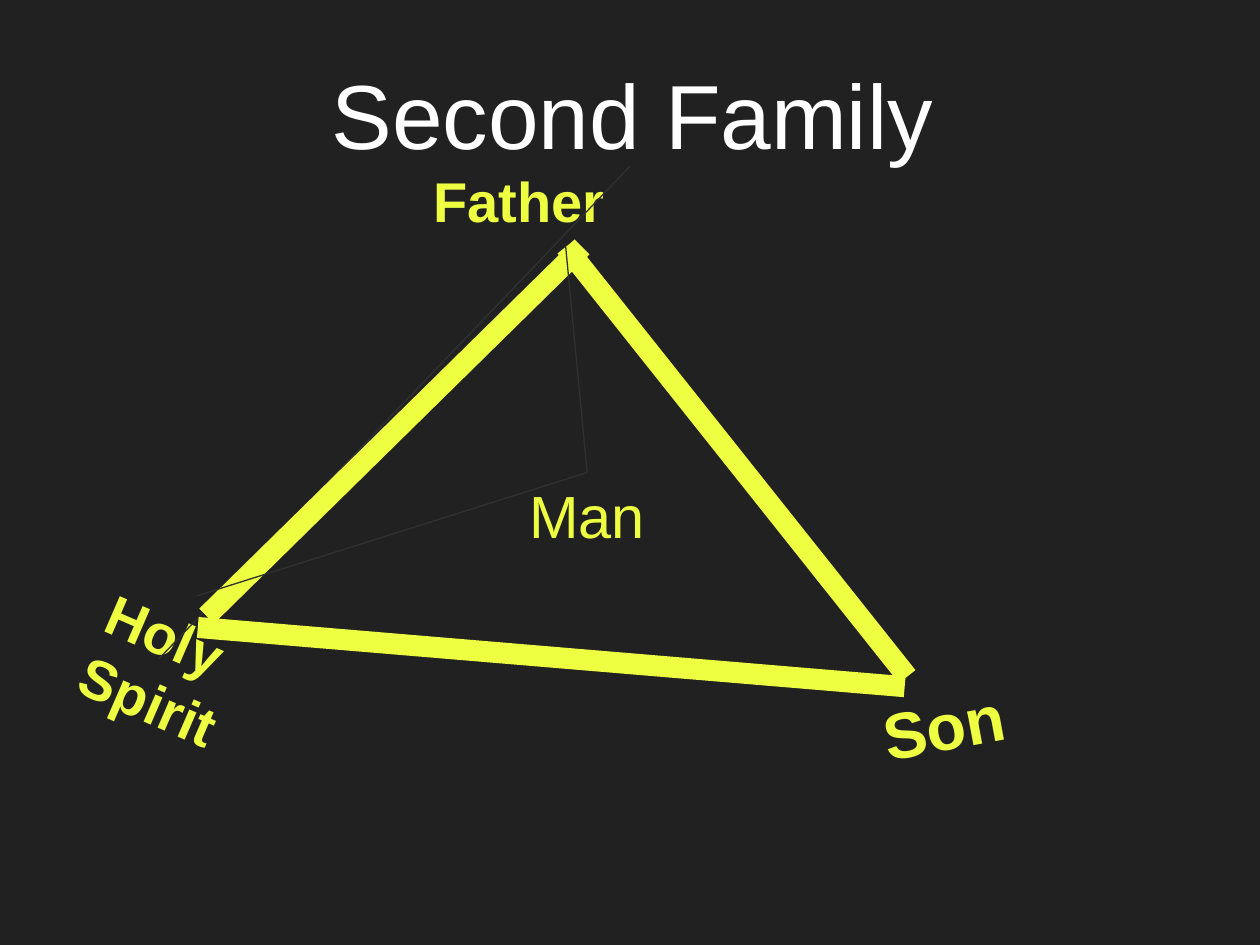
from dataclasses import dataclass
from lxml import etree
from pptx import Presentation
from pptx import util as u
from pptx.dml.color import RGBColor
from pptx.enum import shapes, text
from pptx.oxml.ns import qn


@dataclass(frozen=True)
class Theme:
    font: str = "Arial"
    back: str = "212121"
    white: str = "FFFFFF"
    lime: str = "EEFF41"
    faint: str = "303030"
    title: int = 52
    body: int = 34
    label: int = 32
    large: int = 37
    thick: float = 12
    thin: float = 0.75


class Deck:
    def __init__(self, theme):
        self.theme = theme
        self.prs = Presentation()
        self.prs.slide_width, self.prs.slide_height = u.Inches(10), u.Inches(7.5)
        self.slide = self.prs.slides.add_slide(self.prs.slide_layouts[0])
        fill = self.slide.background.fill
        fill.solid()
        fill.fore_color.rgb = RGBColor.from_string(theme.back)

    def style(self, shape, words, size, color, inset, bold=False):
        frame = shape.text_frame
        frame.text = words
        frame.word_wrap = True
        side, edge = map(u.Inches, inset)
        frame.margin_left = frame.margin_right = side
        frame.margin_top = frame.margin_bottom = edge
        font = frame.paragraphs[0].runs[0].font
        font.name, font.size, font.bold = self.theme.font, u.Pt(size), bold
        font.color.rgb = RGBColor.from_string(color)
        return frame

    def holder(self, index, words, box, size, color, inset, anchor):
        shape = self.slide.placeholders[index]
        shape.left, shape.top, shape.width, shape.height = map(u.Inches, box)
        frame = self.style(shape, words, size, color, inset)
        frame.auto_size = text.MSO_AUTO_SIZE.NONE
        frame.vertical_anchor = anchor
        frame.paragraphs[0].alignment = text.PP_ALIGN.CENTER
        frame.paragraphs[0].space_before = u.Pt(0)
        return shape

    def label(self, words, box, size, turn=0):
        shape = self.slide.shapes.add_textbox(*map(u.Inches, box))
        shape.rotation = turn
        frame = self.style(shape, words, size, self.theme.lime, (0.1, 0.1), True)
        frame.auto_size = text.MSO_AUTO_SIZE.SHAPE_TO_FIT_TEXT
        return shape

    def line(self, start, end, color, width, head=None, tail=None):
        """Draw a line; head and tail are (shape, side) joints."""
        wire = self.slide.shapes.add_connector(
            shapes.MSO_CONNECTOR.STRAIGHT, *map(u.Inches, start + end))
        wire.line.color.rgb = RGBColor.from_string(color)
        wire.line.width = u.Pt(width)
        etree.SubElement(wire._element.spPr, qn("a:effectLst"))
        if head:
            wire.begin_connect(*head)
        if tail:
            wire.end_connect(*tail)


def main():
    t = Theme()
    deck = Deck(t)

    # Title and centre word
    deck.holder(0, "Second Family", (0.52, 0.17, 9, 1.16), t.title, t.white,
                (0.05, 0), text.MSO_ANCHOR.BOTTOM)
    man = deck.holder(1, "Man", (0, 3.75, 9.32, 1.16), t.body, t.lime,
                      (0.1, 0.05), text.MSO_ANCHOR.TOP)

    # Corner labels
    father = deck.label("Father", (3.34, 1.22, 2.3, 0.74), t.label)
    deck.label("Son", (6.9, 5.29, 1.79, 0.82), t.large, 349.5)
    deck.label("Holy Spirit", (0.62, 4.68, 1.36, 1.28), t.label, 23.5)

    # Triangle over a faint guide
    peak, core = (4.49, 1.96), (4.66, 3.75)
    deck.line((5, 1.32), (1.26, 5.23), t.faint, t.thin)
    deck.line((1.64, 4.89), (4.62, 1.96), t.lime, t.thick)
    deck.line(peak, (7.2, 5.37), t.lime, t.thick, head=(father, 2))
    deck.line((1.57, 4.98), (7.18, 5.45), t.lime, t.thick)

    # Faint links to the centre
    deck.line(peak, core, t.faint, t.thin, (father, 2), (man, 0))
    deck.line((1.56, 4.73), core, t.faint, t.thin, tail=(man, 0))

    deck.prs.save("out.pptx")


if __name__ == "__main__":
    main()
